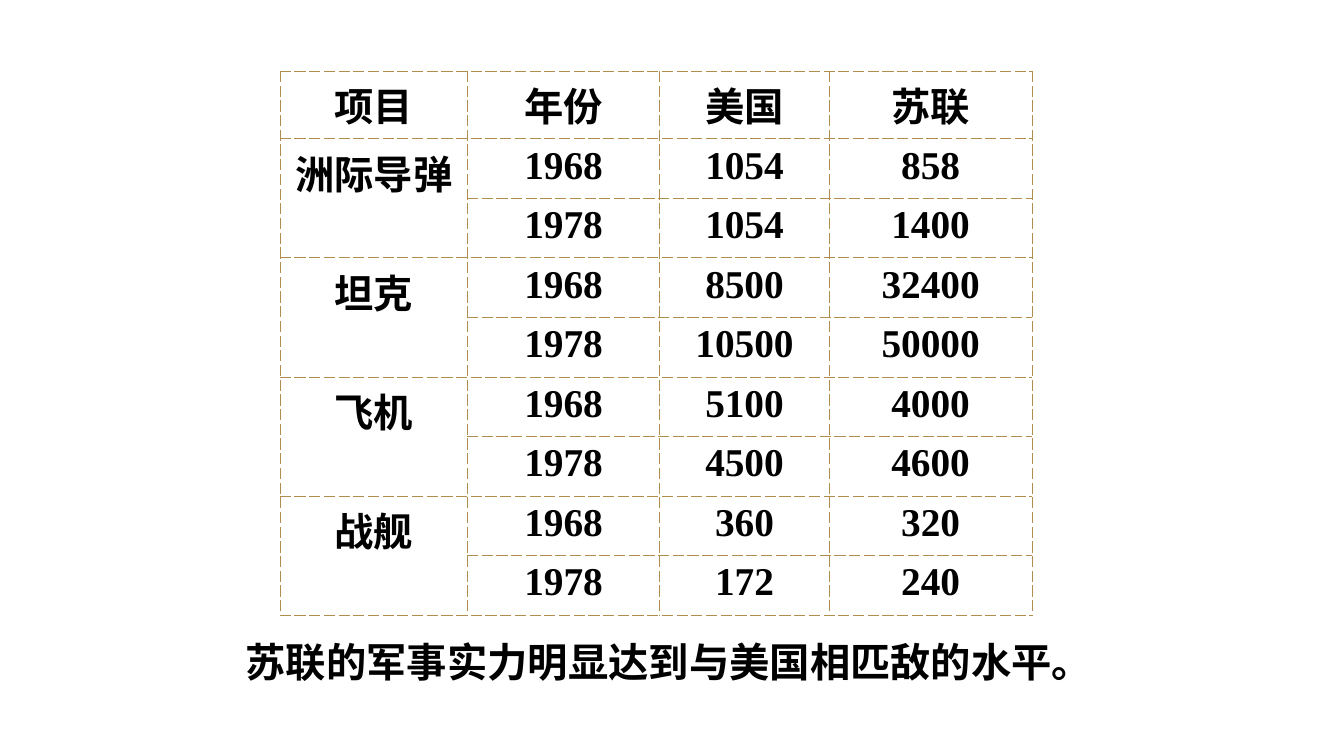
from dataclasses import dataclass

from pptx import Presentation
from pptx.dml.color import RGBColor
from pptx.enum.text import MSO_AUTO_SIZE, PP_ALIGN
from pptx.oxml import parse_xml
from pptx.oxml.ns import nsdecls
from pptx.util import Cm, Pt


@dataclass(frozen=True)
class Theme:
    ink: str = "000000"
    paper: str = "FFFFFF"
    border: str = "B28E4E"
    latin: str = "Times New Roman"
    chinese: str = "Noto Sans CJK SC"
    table_size: float = 28.1
    caption_size: float = 28.8
    border_width: float = 0.75


THEME = Theme()
HEADINGS = ("项目", "年份", "美国", "苏联")
YEARS = ("1968", "1978")
WEAPONS = {
    "洲际导弹": (("1054", "858"), ("1054", "1400")),
    "坦克": (("8500", "32400"), ("10500", "50000")),
    "飞机": (("5100", "4000"), ("4500", "4600")),
    "战舰": (("360", "320"), ("172", "240")),
}
COLUMN_WIDTHS = (4.72, 4.85, 4.27, 5.11)
HEADING_HEIGHT = 1.7
ROW_HEIGHT = 1.5


def write(frame, text, font_name, size, align):
    frame.text = text
    para = frame.paragraphs[0]
    para.alignment = align
    for span in para.runs:
        span.font.name = font_name
        span.font.size = Pt(size)
        span.font.bold = True
        span.font.color.rgb = RGBColor.from_string(THEME.ink)
        span.font._element.append(
            parse_xml(f'<a:ea {nsdecls("a")} typeface="{THEME.chinese}"/>')
        )


def style_cell(cell):
    cell.fill.solid()
    cell.fill.fore_color.rgb = RGBColor.from_string(THEME.paper)
    properties = cell._tc.get_or_add_tcPr()
    for position, side in enumerate("LRTB"):
        border = parse_xml(
            f'<a:ln{side} {nsdecls("a")} w="{Pt(THEME.border_width)}">'
            f'<a:solidFill><a:srgbClr val="{THEME.border}"/></a:solidFill>'
            f'<a:prstDash val="dash"/></a:ln{side}>'
        )
        properties.insert(position, border)


def table_rows():
    rows = [HEADINGS]
    for weapon, counts in WEAPONS.items():
        for index, (year, values) in enumerate(zip(YEARS, counts)):
            rows.append(("" if index else weapon, year, *values))
    return rows


def add_arms_table(page, left, top):
    rows = table_rows()
    heights = [HEADING_HEIGHT] + [ROW_HEIGHT] * (len(rows) - 1)
    table = page.shapes.add_table(
        len(rows), len(HEADINGS), Cm(left), Cm(top),
        Cm(sum(COLUMN_WIDTHS)), Cm(sum(heights)),
    ).table
    table.first_row = False
    table.horz_banding = False
    for column, width in zip(table.columns, COLUMN_WIDTHS):
        column.width = Cm(width)
    for row, height, texts in zip(table.rows, heights, rows):
        row.height = Cm(height)
        for cell, text in zip(row.cells, texts):
            style_cell(cell)
            write(cell.text_frame, text, THEME.latin, THEME.table_size, PP_ALIGN.CENTER)
    for first in range(1, len(rows), len(YEARS)):
        table.cell(first, 0).merge(table.cell(first + len(YEARS) - 1, 0))


def add_caption(page, text, left, top, width, height):
    box = page.shapes.add_textbox(Cm(left), Cm(top), Cm(width), Cm(height))
    frame = box.text_frame
    frame.word_wrap = True
    frame.auto_size = MSO_AUTO_SIZE.SHAPE_TO_FIT_TEXT
    write(frame, text, THEME.chinese, THEME.caption_size, PP_ALIGN.LEFT)


def main():
    deck = Presentation()
    deck.slide_width = Cm(33.87)
    deck.slide_height = Cm(19.05)
    page = deck.slides.add_slide(deck.slide_layouts[6])
    add_arms_table(page, 7.06, 1.8)
    add_caption(page, "苏联的军事实力明显达到与美国相匹敌的水平。", 5.94, 15.93, 21.97, 1.47)
    deck.save("out.pptx")


if __name__ == "__main__":
    main()
